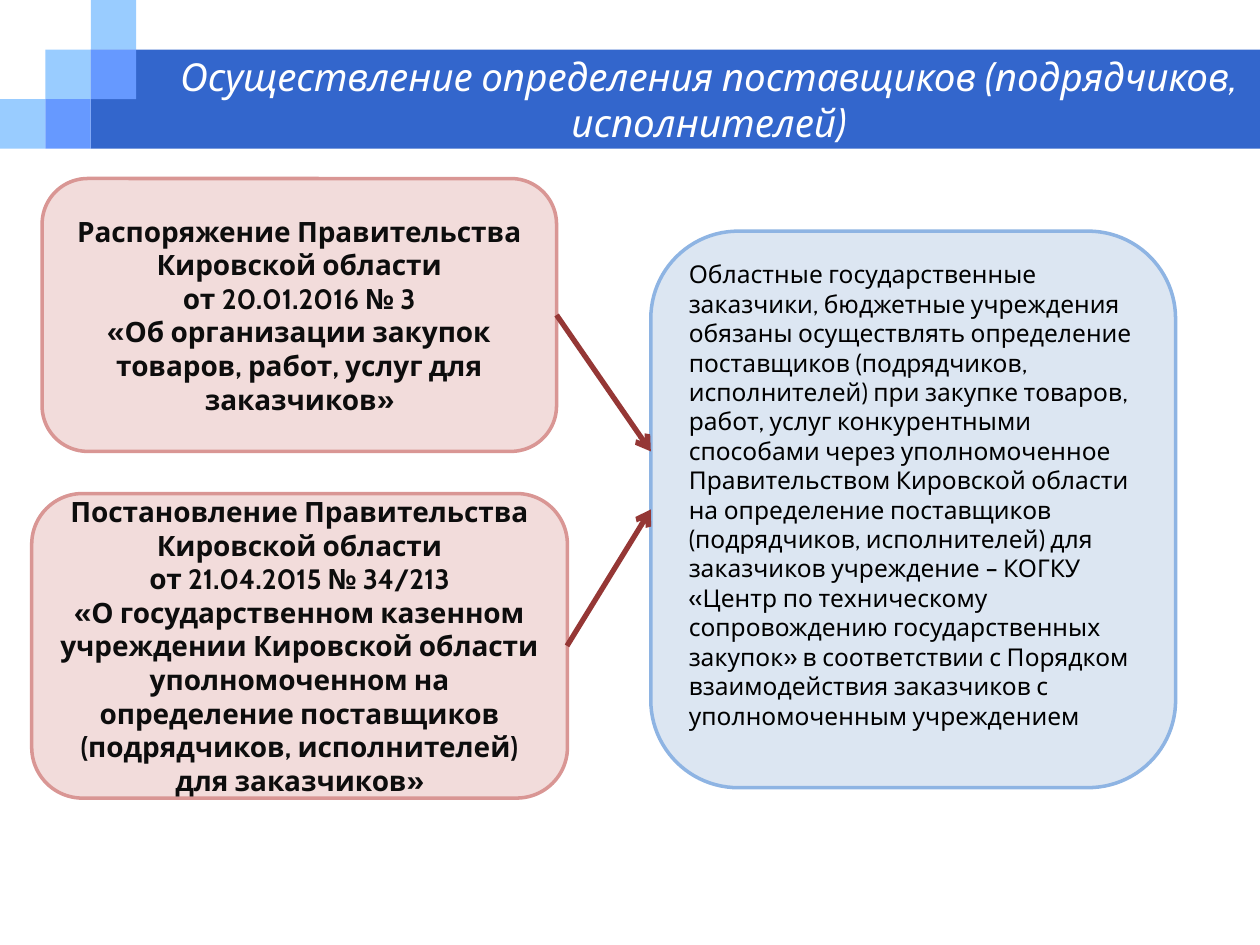
from lxml.etree import SubElement
from pptx import Presentation
from pptx.dml.color import RGBColor
from pptx.enum.shapes import MSO_CONNECTOR, MSO_SHAPE
from pptx.enum.text import MSO_ANCHOR, PP_ALIGN
from pptx.oxml.ns import qn
from pptx.util import Cm, Pt

FONT = "Cabin"
WHITE = RGBColor(0xFF, 0xFF, 0xFF)
BLACK = RGBColor(0x00, 0x00, 0x00)
INK = RGBColor(0x0D, 0x0D, 0x0D)
BAND = RGBColor(0x33, 0x66, 0xCC)
SKY = RGBColor(0x99, 0xCC, 0xFF)
CORNFLOWER = RGBColor(0x66, 0x99, 0xFF)
PINK = RGBColor(0xF2, 0xDC, 0xDB)
ROSE = RGBColor(0xD9, 0x96, 0x94)
PALE_BLUE = RGBColor(0xDC, 0xE6, 0xF2)
MID_BLUE = RGBColor(0x8E, 0xB4, 0xE3)
DARK_RED = RGBColor(0x95, 0x37, 0x35)

TITLE = "Осуществление определения поставщиков (подрядчиков, исполнителей)"
ORDER = [
    "Распоряжение Правительства Кировской области",
    "от 20.01.2016 № 3",
    "«Об организации закупок товаров, работ, услуг для заказчиков»",
]
DECREE = [
    "Постановление Правительства Кировской области",
    "от 21.04.2015 № 34/213",
    "«О государственном казенном учреждении Кировской области "
    "уполномоченном на определение поставщиков (подрядчиков, "
    "исполнителей) для заказчиков»",
]
DUTY = [
    "Областные государственные заказчики, бюджетные учреждения обязаны "
    "осуществлять определение поставщиков (подрядчиков, исполнителей) при "
    "закупке товаров, работ, услуг конкурентными способами через "
    "уполномоченное Правительством Кировской области на определение "
    "поставщиков (подрядчиков, исполнителей) для заказчиков учреждение – "
    "КОГКУ «Центр по техническому сопровождению государственных закупок» "
    "в соответствии с Порядком взаимодействия заказчиков с "
    "уполномоченным учреждением",
]


def add_block(s, kind, x, y, w, h, fill, line=None):
    sp = s.shapes.add_shape(kind, Cm(x), Cm(y), Cm(w), Cm(h))
    sp.shadow.inherit = False
    sp.fill.solid()
    sp.fill.fore_color.rgb = fill
    if line is None:
        sp.line.fill.background()
    else:
        sp.line.color.rgb = line
        sp.line.width = Pt(2)
    return sp


def write(tf, lines, size, color, align, bold=False, italic=False):
    tf.word_wrap = True
    for i, text in enumerate(lines):
        p = tf.add_paragraph() if i else tf.paragraphs[0]
        p.alignment = align
        r = p.add_run()
        r.text = text
        r.font.name = FONT
        r.font.size = Pt(size)
        r.font.bold = bold
        r.font.italic = italic
        r.font.color.rgb = color


def add_header(s, x, y, w, h):
    col, row = 0.915, h / 3
    add_block(s, MSO_SHAPE.RECTANGLE, x + 2 * col, y + row,
              w - 2 * col, 2 * row, BAND)
    for i in range(3):
        add_block(s, MSO_SHAPE.RECTANGLE, x + i * col, y + (2 - i) * row,
                  col, row, SKY)
    for i in (1, 2):
        add_block(s, MSO_SHAPE.RECTANGLE, x + i * col, y + (3 - i) * row,
                  col, row, CORNFLOWER)
    left = x + 3.18
    sp = s.shapes.add_textbox(Cm(left), Cm(y + 1.07), Cm(x + w - left), Cm(1.88))
    tf = sp.text_frame
    tf.margin_left = tf.margin_right = tf.margin_top = tf.margin_bottom = 0
    write(tf, [TITLE], 22, WHITE, PP_ALIGN.CENTER, italic=True)


def add_act(s, x, y, w, h, lines):
    sp = add_block(s, MSO_SHAPE.ROUNDED_RECTANGLE, x, y, w, h, PINK, ROSE)
    sp.text_frame.vertical_anchor = MSO_ANCHOR.MIDDLE
    write(sp.text_frame, lines, 16, INK, PP_ALIGN.CENTER, bold=True)


def add_duty(s, x, y, w, h):
    sp = add_block(s, MSO_SHAPE.ROUNDED_RECTANGLE, x, y, w, h, PALE_BLUE, MID_BLUE)
    tf = sp.text_frame
    tf.vertical_anchor = MSO_ANCHOR.MIDDLE
    tf.margin_bottom = Cm(0.72)
    write(tf, DUTY, 14, BLACK, PP_ALIGN.LEFT)


def add_arrow(s, x1, y1, x2, y2):
    c = s.shapes.add_connector(MSO_CONNECTOR.STRAIGHT,
                               Cm(x1), Cm(y1), Cm(x2), Cm(y2))
    c.line.color.rgb = DARK_RED
    c.line.width = Pt(3)
    SubElement(c.line._get_or_add_ln(), qn("a:tailEnd")).set("type", "arrow")
    SubElement(c._element.spPr, qn("a:effectLst"))


def main():
    prs = Presentation()
    prs.slide_width, prs.slide_height = Cm(25.4), Cm(19.05)
    s = prs.slides.add_slide(prs.slide_layouts[6])
    add_header(s, 0, 0, 25.4, 3)
    add_act(s, 0.85, 3.6, 10.37, 5.5, ORDER)
    add_act(s, 0.64, 9.95, 10.8, 6.14, DECREE)
    add_duty(s, 13.12, 4.66, 10.58, 11.22)
    add_arrow(s, 11.22, 6.35, 13.12, 9.1)
    add_arrow(s, 11.43, 13.02, 13.12, 10.27)
    prs.save("out.pptx")


if __name__ == "__main__":
    main()
